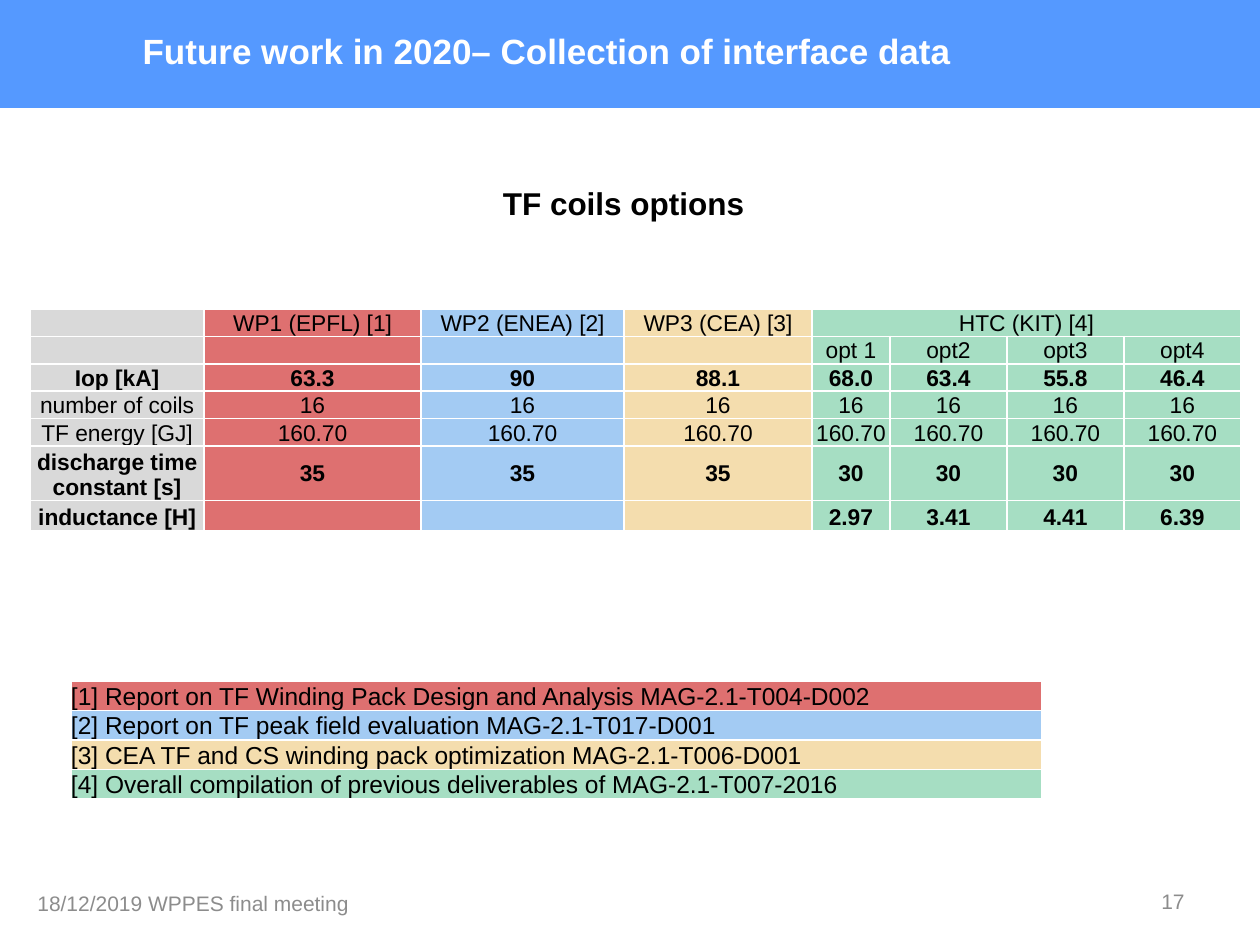
from lxml import etree
from pptx import Presentation
from pptx import util as u
from pptx.dml.color import RGBColor
from pptx.enum import shapes, text
from pptx.oxml.ns import qn

PX = 914400 / 126
FONT = "Arial"
COLORS = {
    "band": "5599FF", "white": "FFFFFF", "black": "000000", "footer": "8C8C8C",
    "label": "D9D9D9", "wp1": "DE7070", "wp2": "A3CBF3", "wp3": "F4DDAE", "htc": "A6DEC3",
}
ALIGN, ANCHOR = text.PP_ALIGN, text.MSO_ANCHOR

COL_FILLS = ["label", "wp1", "wp2", "wp3"] + ["htc"] * 4
COL_WIDTHS = [174, 217, 203, 188, 78, 117, 117, 117]
ROW_HEIGHTS = [25, 26, 27, 26, 26, 51, 30]
BOLD_ROWS = {2, 5, 6}
MIDDLE_ROW = 5
COIL_ROWS = [
    ["", "WP1 (EPFL) [1]", "WP2 (ENEA) [2]", "WP3 (CEA) [3]", "HTC (KIT) [4]", "", "", ""],
    ["", "", "", "", "opt 1", "opt2", "opt3", "opt4"],
    ["Iop [kA]", "63.3", "90", "88.1", "68.0", "63.4", "55.8", "46.4"],
    ["number of coils"] + ["16"] * 7,
    ["TF energy [GJ]"] + ["160.70"] * 7,
    ["discharge time constant [s]"] + ["35"] * 3 + ["30"] * 4,
    ["inductance [H]", "", "", "", "2.97", "3.41", "4.41", "6.39"],
]
REFERENCES = [
    ("wp1", "[1] Report on TF Winding Pack Design and Analysis MAG-2.1-T004-D002"),
    ("wp2", "[2] Report on TF peak field evaluation MAG-2.1-T017-D001"),
    ("wp3", "[3] CEA TF and CS winding pack optimization MAG-2.1-T006-D001"),
    ("htc", "[4] Overall compilation of previous deliverables of MAG-2.1-T007-2016"),
]


def emu(px):
    return u.Emu(round(px * PX))


def rgb(name):
    return RGBColor.from_string(COLORS[name])


def write(tf, content, size, color="black", bold=False, align=ALIGN.LEFT):
    tf.text = content
    p = tf.paragraphs[0]
    p.alignment = align
    for r in p.runs:
        r.font.name, r.font.size, r.font.bold = FONT, u.Pt(size), bold
        r.font.color.rgb = rgb(color)
    if not content:
        # An empty cell takes its line height from the end mark.
        etree.SubElement(p._p, qn("a:endParaRPr"), sz=str(size * 100))


def add_label(s, box, content, size, wrap=True, anchor=ANCHOR.MIDDLE, **style):
    tf = s.shapes.add_textbox(*map(emu, box)).text_frame
    tf.word_wrap, tf.vertical_anchor = wrap, anchor
    write(tf, content, size, **style)


def set_borders(cell):
    tc_pr = cell._tc.get_or_add_tcPr()
    for i, side in enumerate(("lnL", "lnR", "lnT", "lnB")):
        ln = etree.Element(qn(f"a:{side}"), w=str(u.Pt(1)))
        fill = etree.SubElement(ln, qn("a:solidFill"))
        etree.SubElement(fill, qn("a:srgbClr"), val=COLORS["white"])
        tc_pr.insert(i, ln)


def fill_cell(cell, content, color, size, anchor=ANCHOR.BOTTOM, **style):
    cell.margin_left = cell.margin_right = cell.margin_top = cell.margin_bottom = 0
    cell.vertical_anchor = anchor
    cell.fill.solid()
    cell.fill.fore_color.rgb = rgb(color)
    set_borders(cell)
    write(cell.text_frame, content, size, **style)


def add_grid(s, left, top, widths, heights):
    """Add an unstyled table with the given column widths and row heights."""
    box = (left, top, sum(widths), sum(heights))
    table = s.shapes.add_table(len(heights), len(widths), *map(emu, box)).table
    table.first_row = table.horz_banding = False
    for col, width in zip(table.columns, widths):
        col.width = emu(width)
    for row, height in zip(table.rows, heights):
        row.height = emu(height)
    return table


def add_header(s, left, top, width, height):
    band = s.shapes.add_shape(shapes.MSO_SHAPE.RECTANGLE, *map(emu, (left, top, width, height)))
    band.shadow.inherit = False
    band.fill.solid()
    band.fill.fore_color.rgb = rgb("band")
    band.line.fill.background()
    s.shapes._spTree.insert(2, band._element)

    title = s.shapes.title
    title.left, title.top, title.width, title.height = map(emu, (left + 130, top + 6, 997, 90))
    title.text_frame.vertical_anchor = ANCHOR.MIDDLE
    write(title.text_frame, "Future work in 2020– Collection of interface data", 20, "white", True)


def add_coil_table(s, left, top):
    table = add_grid(s, left, top, COL_WIDTHS, ROW_HEIGHTS)
    for i, values in enumerate(COIL_ROWS):
        for j, (value, color) in enumerate(zip(values, COL_FILLS)):
            middle = i == MIDDLE_ROW and j > 0
            fill_cell(table.cell(i, j), value, color, 13,
                      ANCHOR.MIDDLE if middle else ANCHOR.BOTTOM,
                      bold=i in BOLD_ROWS, align=ALIGN.CENTER)
    table.cell(0, 4).merge(table.cell(0, 7))


def add_references(s, left, top, width, row_height):
    table = add_grid(s, left, top, [width], [row_height] * len(REFERENCES))
    for i, (color, reference) in enumerate(REFERENCES):
        fill_cell(table.cell(i, 0), reference, color, 14)


def add_footer(s, left, top, width, height):
    add_label(s, (left, top + 2, 393, height), "18/12/2019 WPPES final meeting", 12, color="footer")
    add_label(s, (left + width - 294, top, 294, height), "17", 12, color="footer",
              align=ALIGN.RIGHT)


def main():
    prs = Presentation()
    prs.slide_width, prs.slide_height = emu(1260), emu(945)
    s = prs.slides.add_slide(prs.slide_layouts[5])
    add_header(s, 0, 0, 1260, 108)
    add_label(s, (489, 178, 278, 50), "TF coils options ", 18, wrap=False,
              anchor=ANCHOR.TOP, bold=True, align=ALIGN.CENTER)
    add_coil_table(s, 30, 309)
    add_references(s, 71, 681, 971, 29)
    add_footer(s, 25, 876, 1172, 50)
    prs.save("out.pptx")


if __name__ == "__main__":
    main()
